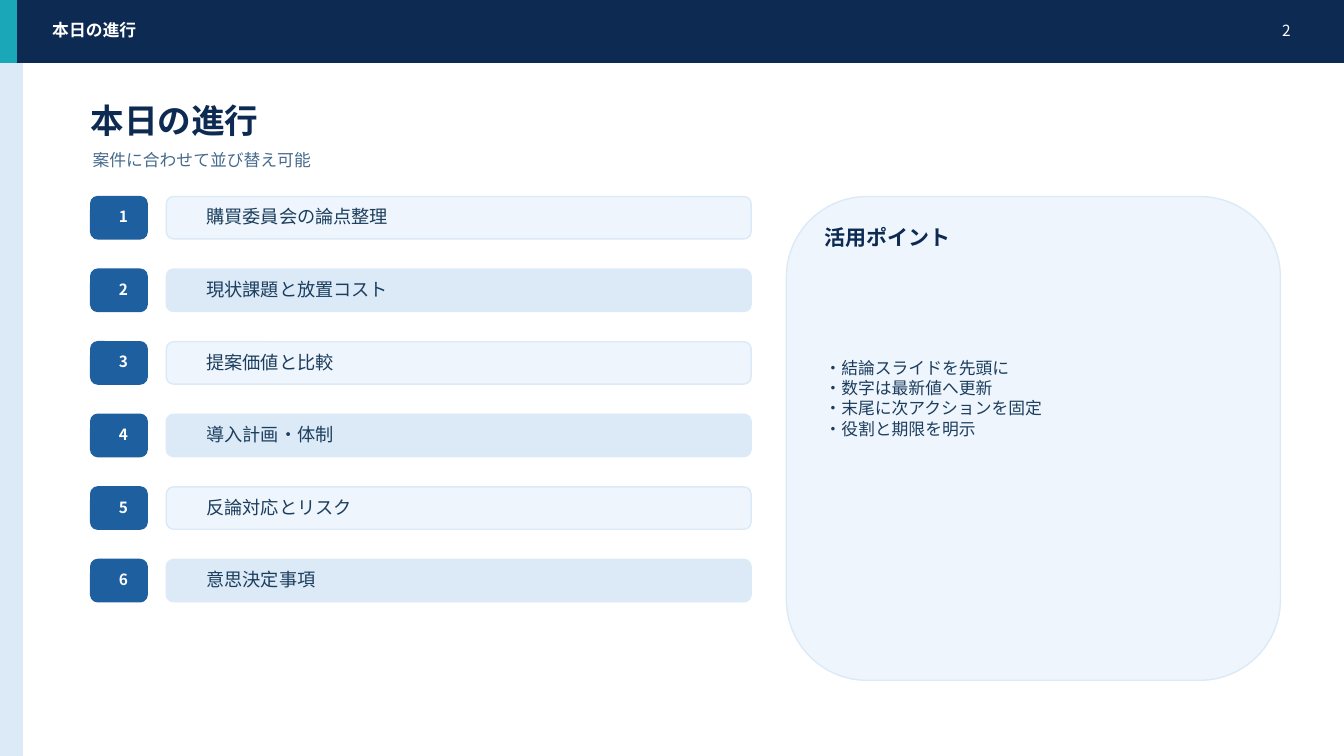
from lxml import etree
from pptx import Presentation
from pptx.dml.color import RGBColor
from pptx.enum.shapes import MSO_SHAPE
from pptx.enum.text import MSO_ANCHOR, PP_ALIGN
from pptx.oxml.ns import qn
from pptx.util import Pt

# Content
TITLE = "本日の進行"
PAGE = "2"
NOTE = "案件に合わせて並び替え可能"
STEPS = [
    "購買委員会の論点整理",
    "現状課題と放置コスト",
    "提案価値と比較",
    "導入計画・体制",
    "反論対応とリスク",
    "意思決定事項",
]
TIPS_HEAD = "活用ポイント"
TIPS = [
    "・結論スライドを先頭に",
    "・数字は最新値へ更新",
    "・末尾に次アクションを固定",
    "・役割と期限を明示",
]

# Style
FONT = "Noto Sans CJK JP"
HUES = {
    "white": "FFFFFF", "navy": "0D2A52", "teal": "1AA8B8", "blue": "1D5F9F",
    "mist": "DCEAF7", "pale": "EEF5FC", "slate": "476B8C", "ink": "1C3E5E",
}
RECT, ROUND = MSO_SHAPE.RECTANGLE, MSO_SHAPE.ROUNDED_RECTANGLE
LEFT, MID, RIGHT = PP_ALIGN.LEFT, PP_ALIGN.CENTER, PP_ALIGN.RIGHT
MIDDLE = MSO_ANCHOR.MIDDLE

# Layout in px, 100 to the inch
PX = 9144
WIDE, HIGH = 1333, 750
BAR_H = 62
TOP, ROW_H, PITCH = 195, 42, 72
TEXT_DROP = 10

deck = Presentation()
deck.slide_width, deck.slide_height = WIDE * PX, HIGH * PX
slide = deck.slides.add_slide(deck.slide_layouts[6])


def hue(name):
    return RGBColor.from_string(HUES[name])


def add_box(kind, place, fill, edge=None):
    box = slide.shapes.add_shape(kind, *(n * PX for n in place))
    box.shadow.inherit = False
    box.fill.solid()
    box.fill.fore_color.rgb = hue(fill)
    box.line.color.rgb = hue(edge or fill)
    box.line.width = Pt(1)


def add_text(place, lines, size, color, bold=False, align=LEFT):
    frame = slide.shapes.add_textbox(*(n * PX for n in place)).text_frame
    frame.word_wrap = True
    frame.vertical_anchor = MIDDLE
    for i, line in enumerate(lines):
        para = frame.add_paragraph() if i else frame.paragraphs[0]
        para.alignment = align
        run = para.add_run()
        run.text = line
        font = run.font
        font.name, font.size, font.bold = FONT, Pt(size), bold
        font.color.rgb = hue(color)
        # East Asian typeface
        props = run._r.get_or_add_rPr()
        etree.SubElement(props, qn("a:ea")).set("typeface", FONT)


# Side strip and top bar
add_box(RECT, (0, 55, 22, HIGH - 55), "mist")
add_box(RECT, (0, 0, WIDE, BAR_H), "navy")
add_box(RECT, (0, 0, 16, BAR_H), "teal")
add_text((42, 17, 880, 26), [TITLE], 12, "white", bold=True)
add_text((1215, 17, 75, 26), [PAGE], 11, "white", align=RIGHT)

# Heading
add_text((80, 95, 1140, 48), [TITLE], 24, "navy", bold=True)
add_text((82, 144, 1120, 30), [NOTE], 12, "slate")

# Agenda rows
for i, step in enumerate(STEPS):
    y = TOP + i * PITCH
    add_box(ROUND, (90, y, 56, ROW_H), "blue")
    add_text((108, y + TEXT_DROP, 20, 20), [str(i + 1)], 11, "white",
             bold=True, align=MID)
    add_box(ROUND, (165, y, 580, ROW_H), "mist" if i % 2 else "pale", "mist")
    add_text((195, y + TEXT_DROP, 520, 20), [step], 13, "ink")

# Tips panel
add_box(ROUND, (780, TOP, 490, 480), "pale", "mist")
add_text((808, 220, 410, 30), [TIPS_HEAD], 15, "navy", bold=True)
add_text((808, 270, 420, 250), TIPS, 12, "ink")

deck.save("out.pptx")
